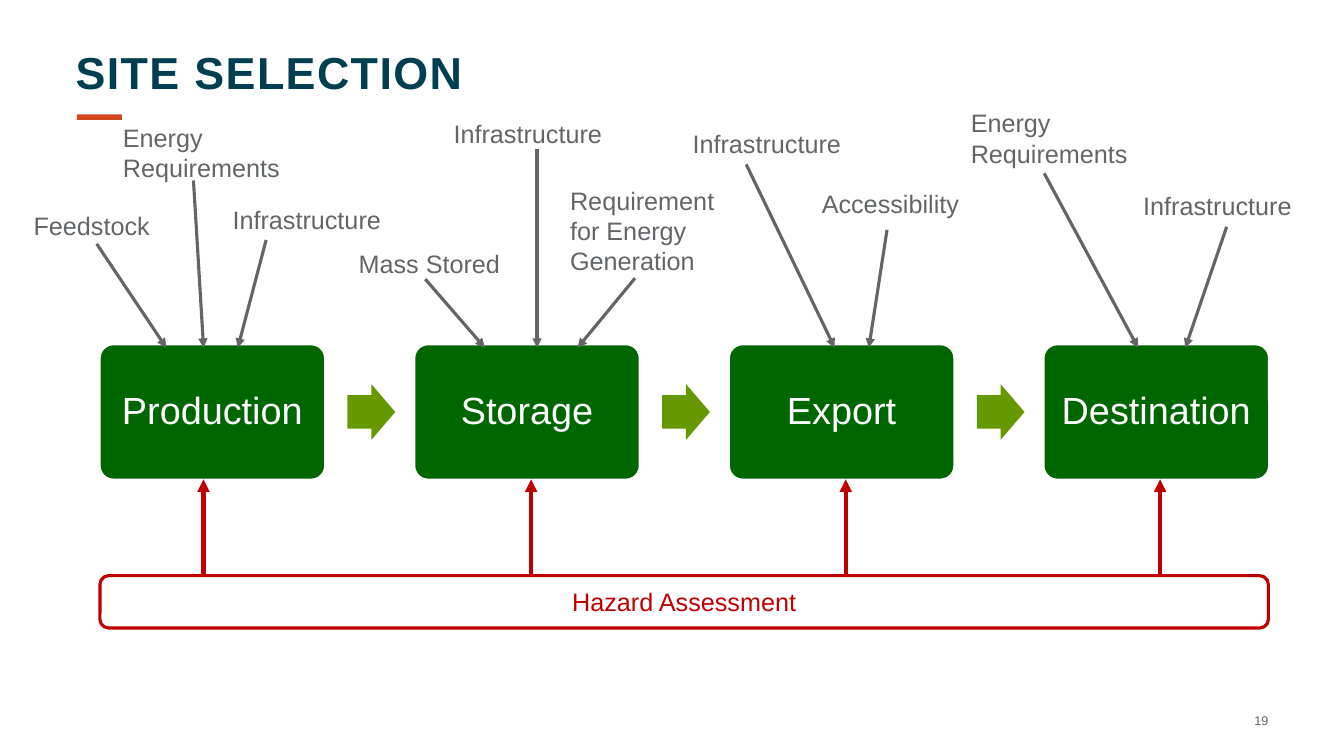
from lxml import etree
from pptx import Presentation
from pptx.dml.color import RGBColor
from pptx.enum import shapes, text
from pptx.oxml import ns
from pptx.util import Pt

COLORS = {
    "title": "003E51",
    "accent": "D3451D",
    "label": "636669",
    "stage": "006600",
    "flow": "669900",
    "hazard": "C00000",
    "white": "FFFFFF",
}
STAGES = ["Production", "Storage", "Export", "Destination"]
STAGE_LEFT, STAGE_TOP, STAGE_WIDTH, STAGE_HEIGHT = 71.4, 246.2, 160.6, 96.2
STAGE_PITCH = 224.75
FLOW_OFFSET = 176.8
FACTOR_ARROW_END = 248.4
HAZARD_TOP = 411.2
HAZARD_ARROWS = [145.4, 379.4, 604.1, 828.7]

# Text, label box (left, top, width, height), arrow start (x, y), arrow end x
FACTORS = [
    ("Feedstock", (24, 150.5, 89.3, 23.8), (69.1, 174.2), 118.8),
    ("Energy Requirements", (87.8, 87.1, 118.8, 41), (138.2, 128.9), 145.4),
    ("Infrastructure", (166.1, 146.2, 118.8, 24.5), (190.1, 171.4), 169.9),
    ("Mass Stored", (256.2, 177.5, 118.8, 26), (303.8, 199.4), 346.3),
    ("Infrastructure", (324, 84.4, 118.8, 22.3), (383.6, 106.6), 383.6),
    ("Requirement for Energy Generation", (407.2, 132.3, 118.8, 66.2),
     (453.6, 198.7), 412.6),
    ("Infrastructure", (494.7, 92, 118.8, 23.8), (533, 117.4), 596.2),
    ("Accessibility", (587, 134.7, 118.8, 23.8), (633.6, 164.2), 620.6),
    ("Energy Requirements", (693.4, 77, 118.8, 41), (745.9, 123.8), 812.9),
    ("Infrastructure", (816.6, 136.1, 118.8, 26.6), (876.2, 162), 846.7),
]


def color(name):
    return RGBColor.from_string(COLORS[name])


def write_text(shape, content, size=18, fill="label", bold=False,
               align=text.PP_ALIGN.LEFT, anchor=text.MSO_ANCHOR.TOP,
               margin=0, line_spacing=1.0, letter_spacing=0):
    frame = shape.text_frame
    frame.word_wrap = True
    frame.vertical_anchor = anchor
    frame.margin_left = frame.margin_right = Pt(margin)
    frame.margin_top = frame.margin_bottom = Pt(margin)
    paragraph = frame.paragraphs[0]
    paragraph.alignment = align
    paragraph.line_spacing = line_spacing
    run = paragraph.add_run()
    run.text = content
    run.font.name = "Arial"
    run.font.size = Pt(size)
    run.font.bold = bold
    run.font.color.rgb = color(fill)
    if letter_spacing:
        run.font._element.set("spc", str(letter_spacing * 100))


def add_label(slide, content, box, **text_format):
    shape = slide.shapes.add_textbox(*map(Pt, box))
    write_text(shape, content, **text_format)


def add_block(slide, kind, box, fill=None, line=None, line_width=1,
              adjustments=()):
    shape = slide.shapes.add_shape(kind, *map(Pt, box))
    shape.shadow.inherit = False
    for index, value in enumerate(adjustments):
        shape.adjustments[index] = value
    if fill:
        shape.fill.solid()
        shape.fill.fore_color.rgb = color(fill)
    else:
        shape.fill.background()
    if line:
        shape.line.color.rgb = color(line)
        shape.line.width = Pt(line_width)
    else:
        shape.line.fill.background()
    return shape


def add_arrow(slide, start, end, line, width):
    connector = slide.shapes.add_connector(
        shapes.MSO_CONNECTOR.STRAIGHT, *map(Pt, (*start, *end)))
    connector.line.color.rgb = color(line)
    connector.line.width = Pt(width)
    head = etree.SubElement(connector.line._get_or_add_ln(), ns.qn("a:tailEnd"))
    head.set("type", "triangle")
    etree.SubElement(connector._element.spPr, ns.qn("a:effectLst"))


def add_stages(slide):
    """Draw the process boxes and the block arrows between them."""
    for index, name in enumerate(STAGES):
        left = STAGE_LEFT + index * STAGE_PITCH
        stage = add_block(
            slide, shapes.MSO_SHAPE.ROUNDED_RECTANGLE,
            (left, STAGE_TOP, STAGE_WIDTH, STAGE_HEIGHT),
            fill="stage", line="white", adjustments=[0.1])
        write_text(stage, name, size=27, fill="white", margin=8,
                   align=text.PP_ALIGN.CENTER, anchor=text.MSO_ANCHOR.MIDDLE,
                   line_spacing=0.9)
        if index < len(STAGES) - 1:
            add_block(slide, shapes.MSO_SHAPE.RIGHT_ARROW,
                      (left + FLOW_OFFSET, 274.4, 34.1, 39.8),
                      fill="flow", adjustments=[0.6, 0.5])


def add_hazard_assessment(slide):
    bar = add_block(slide, shapes.MSO_SHAPE.ROUNDED_RECTANGLE,
                    (STAGE_LEFT, HAZARD_TOP, 834.6, 37.4),
                    line="hazard", line_width=2.25)
    write_text(bar, "Hazard Assessment", fill="hazard", margin=3.6,
               align=text.PP_ALIGN.CENTER, anchor=text.MSO_ANCHOR.MIDDLE)
    for x in HAZARD_ARROWS:
        add_arrow(slide, (x, HAZARD_TOP), (x, STAGE_TOP + STAGE_HEIGHT),
                  "hazard", 3)


def main():
    presentation = Presentation()
    presentation.slide_width, presentation.slide_height = Pt(960), Pt(540)
    slide = presentation.slides.add_slide(presentation.slide_layouts[6])
    add_stages(slide)
    add_label(slide, "SITE SELECTION", (54, 36, 852, 45.4), size=32,
              fill="title", bold=True, line_spacing=0.9, letter_spacing=1)
    add_block(slide, shapes.MSO_SHAPE.RECTANGLE, (55, 81.7, 32.2, 4),
              fill="accent")
    add_label(slide, "19", (879, 500.4, 27, 28.8), size=9,
              align=text.PP_ALIGN.RIGHT, anchor=text.MSO_ANCHOR.MIDDLE)
    for content, box, start, end_x in FACTORS:
        add_label(slide, content, box)
        add_arrow(slide, start, (end_x, FACTOR_ARROW_END), "label", 2.25)
    add_hazard_assessment(slide)
    presentation.save("out.pptx")


if __name__ == "__main__":
    main()
